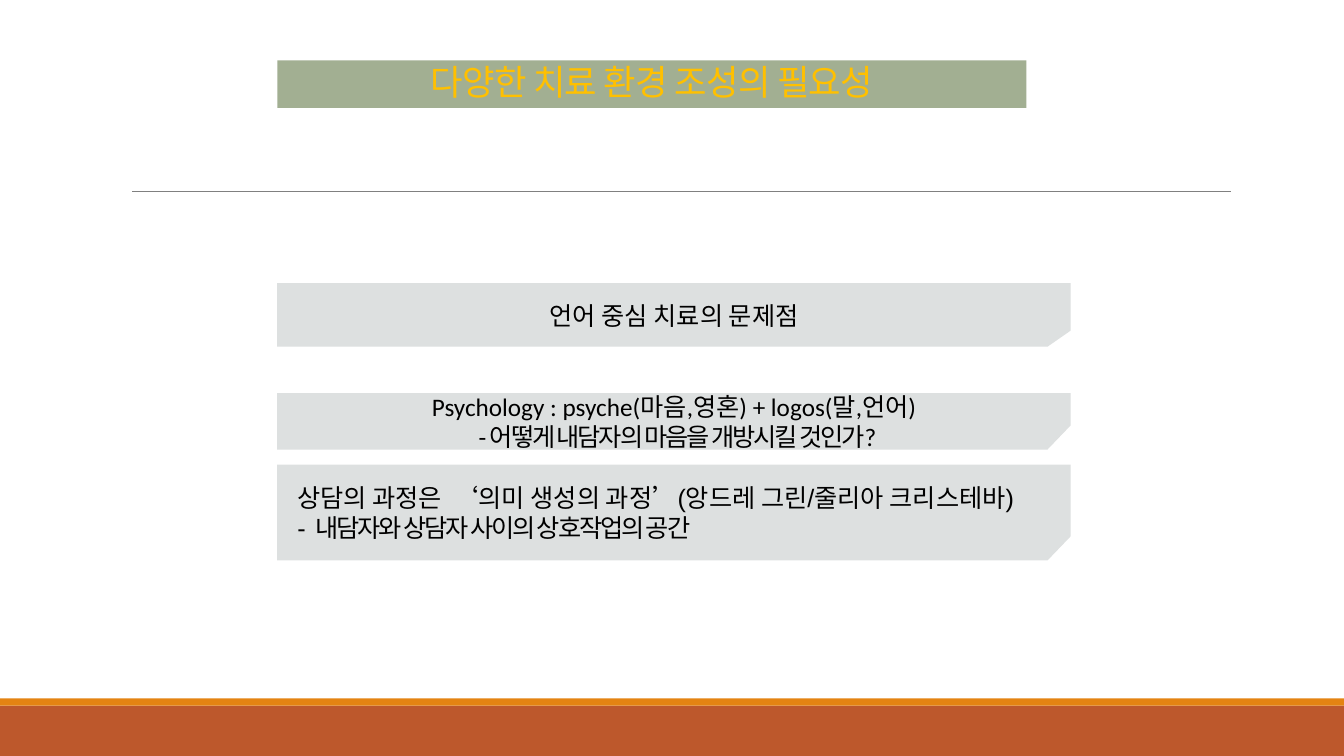
from pptx import Presentation
from pptx.dml.color import RGBColor
from pptx.enum.shapes import MSO_CONNECTOR as Connector, MSO_SHAPE as Shape
from pptx.enum.text import MSO_ANCHOR as Anchor, MSO_AUTO_SIZE as AutoSize, PP_ALIGN as Align
from pptx.oxml.ns import qn
from pptx.util import Inches, Pt

RUST = RGBColor(0xBD, 0x58, 0x2C)
ORANGE = RGBColor(0xE4, 0x83, 0x12)
GRAY = RGBColor(0x80, 0x80, 0x80)
SAGE = RGBColor(0xA2, 0xAF, 0x92)
GOLD = RGBColor(0xFF, 0xC0, 0x00)
PALE = RGBColor(0xDD, 0xE0, 0xE0)
BLACK = RGBColor(0, 0, 0)

TITLE = "다양한 치료 환경 조성의 필요성"
# Top, height, corner height, font, alignment, lines as (text, letter spacing, indent)
PANELS = [
    (2.81, 0.63, 0.16, "Calibri", Align.CENTER, [("언어 중심 치료의 문제점", 0, 0)]),
    (3.9, 0.56, 0.24, "Calibri", Align.CENTER, [
        ("Psychology : psyche(마음,영혼) + logos(말,언어)", 0, 0),
        ("- 어떻게 내담자의 마음을 개방시킬 것인가?", -1.5, 0.07)]),
    (4.61, 0.95, 0.24, "Arial", Align.LEFT, [
        ("상담의 과정은  ‘의미 생성의 과정’(앙드레 그린/줄리아 크리스테바)", 0, 0),
        ("-  내담자와 상담자 사이의 상호작업의 공간", -1.5, 0)]),
]
BANDS = [(7, 0.5, RUST), (6.93, 0.07, ORANGE)]
WIDTH, HEIGHT = 13.33, 7.5
LEFT, PANEL_WIDTH, CORNER_WIDTH = 2.75, 7.87, 0.23


def paint(shape, color):
    shape.shadow.inherit = False
    shape.fill.solid()
    shape.fill.fore_color.rgb = color
    shape.line.fill.background()


def add_run(para, text, size, font, color, spacing):
    span = para.add_run()
    span.text = text
    span.font.size = Pt(size)
    span.font.name = font
    span.font.color.rgb = color
    if spacing:
        span.font._element.set("spc", str(round(spacing * 100)))


def add_panel(page, top, height, corner, font, align, lines):
    right, bottom = LEFT + PANEL_WIDTH, top + height
    outline = [(LEFT, top), (LEFT, bottom), (right - CORNER_WIDTH, bottom),
               (right, bottom - corner)]
    builder = page.shapes.build_freeform(Inches(right), Inches(top))
    builder.add_line_segments([(Inches(x), Inches(y)) for x, y in outline])
    panel = builder.convert_to_shape()
    paint(panel, PALE)
    frame = panel.text_frame
    frame.word_wrap = True
    frame.vertical_anchor = Anchor.MIDDLE
    frame.margin_left = frame.margin_right = Inches(0.2)
    frame.margin_top = frame.margin_bottom = 0
    for number, (text, spacing, indent) in enumerate(lines):
        para = frame.add_paragraph() if number else frame.paragraphs[0]
        para.alignment = align
        if indent:
            para._p.get_or_add_pPr().set("marL", str(Inches(indent)))
        add_run(para, text, 18, font, BLACK, spacing)


def main():
    deck = Presentation()
    deck.slide_width, deck.slide_height = Inches(WIDTH), Inches(HEIGHT)
    page = deck.slides.add_slide(deck.slide_layouts[5])

    for top, height, color in BANDS:
        band = page.shapes.add_shape(Shape.RECTANGLE, 0, Inches(top),
                                     Inches(WIDTH), Inches(height))
        paint(band, color)

    rule = page.shapes.add_connector(Connector.STRAIGHT, Inches(1.31), Inches(1.9),
                                     Inches(12.21), Inches(1.9))
    rule.line.color.rgb = GRAY
    rule.line.width = Pt(0.5)
    properties = rule._element.spPr
    properties.append(properties.makeelement(qn("a:effectLst"), {}))

    title = page.shapes.title
    title.left, title.top = Inches(LEFT), Inches(0.6)
    title.width, title.height = Inches(7.43), Inches(0.47)
    title.fill.solid()
    title.fill.fore_color.rgb = SAGE
    frame = title.text_frame
    frame.auto_size = AutoSize.NONE
    frame.word_wrap = True
    frame.vertical_anchor = Anchor.BOTTOM
    para = frame.paragraphs[0]
    para.alignment = Align.CENTER
    para.line_spacing = 0.85
    add_run(para, TITLE, 25.2, "Calibri", GOLD, -0.5)

    for panel in PANELS:
        add_panel(page, *panel)
    deck.save("out.pptx")


if __name__ == "__main__":
    main()
